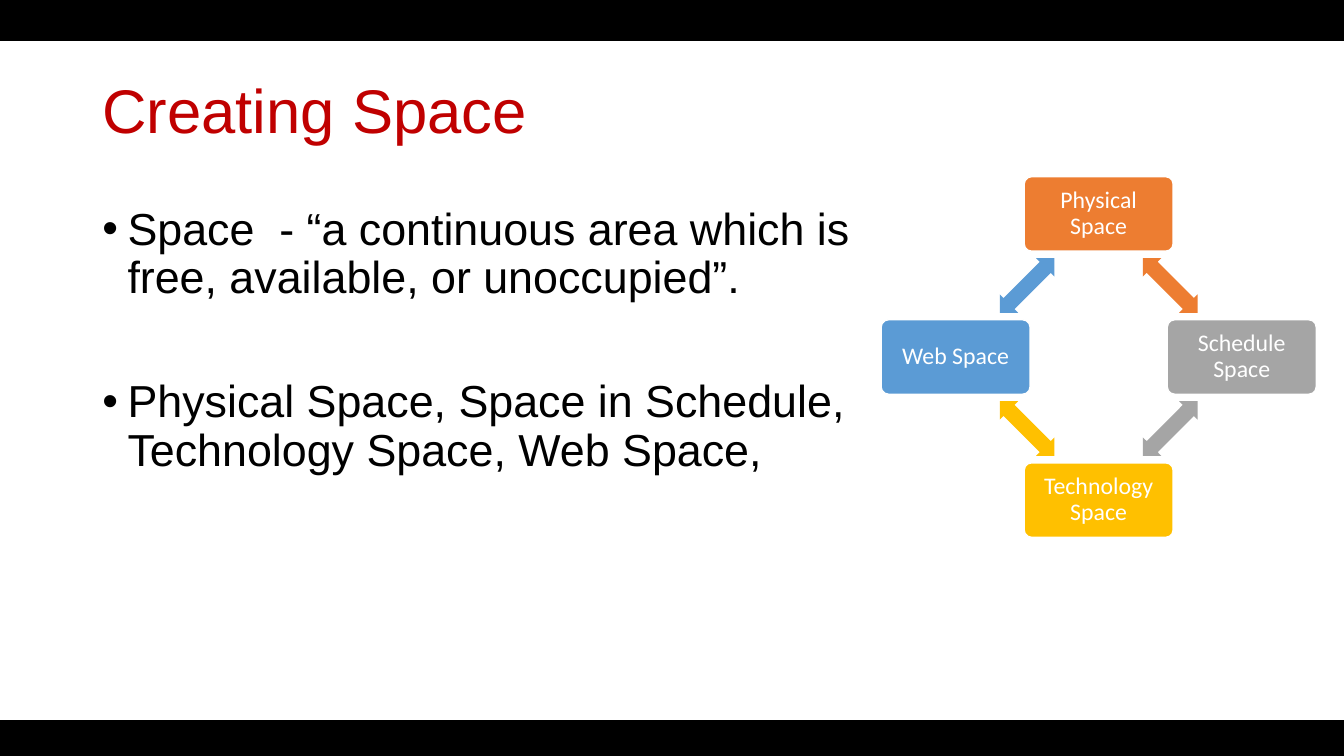
from dataclasses import dataclass
from math import cos, radians, sin

from lxml import etree
from pptx import Presentation
from pptx.dml.color import RGBColor
from pptx.enum.shapes import MSO_SHAPE
from pptx.enum.text import MSO_ANCHOR, PP_ALIGN
from pptx.oxml.ns import qn
from pptx.util import Pt

RECTANGLE = MSO_SHAPE.RECTANGLE
ROUNDED = MSO_SHAPE.ROUNDED_RECTANGLE
DOUBLE_ARROW = MSO_SHAPE.LEFT_RIGHT_ARROW
MIDDLE, TOP = MSO_ANCHOR.MIDDLE, MSO_ANCHOR.TOP
LEFT, CENTER = PP_ALIGN.LEFT, PP_ALIGN.CENTER


@dataclass(frozen=True)
class Theme:
    black: str = "000000"
    white: str = "FFFFFF"
    title_red: str = "C00000"
    orange: str = "ED7D31"
    gray: str = "A5A5A5"
    gold: str = "FFC000"
    blue: str = "5B9BD5"
    text_font: str = "Arial"
    node_font: str = "Calibri"
    title_size: int = 44
    body_size: int = 32
    node_size: int = 17


THEME = Theme()
SLIDE_WIDTH, SLIDE_HEIGHT = 960, 540
TOP_BAR_HEIGHT, BOTTOM_BAR_TOP = 28.8, 514.8
TEXT_LEFT = 66
BULLET_INDENT = 18
CYCLE_X, CYCLE_Y, CYCLE_RADIUS = 784.8, 255, 102.2
NODE_WIDTH, NODE_HEIGHT = 106.4, 53.2
ARROW_LENGTH, ARROW_HEIGHT = 55.2, 18.6

DEFINITION = "Space  - “a continuous area which is free, available, or unoccupied”."
KINDS = "Physical Space, Space in Schedule, Technology Space, Web Space,"
CYCLE = [
    ("Physical Space", THEME.orange),
    ("Schedule Space", THEME.gray),
    ("Technology Space", THEME.gold),
    ("Web Space", THEME.blue),
]


def style_paragraph(paragraph, text, font, size, color, align=LEFT):
    paragraph.text = text
    paragraph.alignment = align
    paragraph.line_spacing = 0.9
    paragraph.font.name = font
    paragraph.font.size = Pt(size)
    paragraph.font.color.rgb = RGBColor.from_string(color)


def add_block(slide, preset, left, top, width, height, fill, outline=None):
    block = slide.shapes.add_shape(preset, Pt(left), Pt(top), Pt(width), Pt(height))
    block.shadow.inherit = False
    block.fill.solid()
    block.fill.fore_color.rgb = RGBColor.from_string(fill)
    if outline:
        block.line.color.rgb = RGBColor.from_string(outline)
        block.line.width = Pt(1)
    else:
        block.line.fill.background()
    return block


def add_text_frame(slide, left, top, width, height, anchor):
    frame = slide.shapes.add_textbox(Pt(left), Pt(top), Pt(width), Pt(height)).text_frame
    frame.word_wrap = True
    frame.vertical_anchor = anchor
    return frame


def add_title(slide, text):
    frame = add_text_frame(slide, TEXT_LEFT, 28.8, 828, 104.4, MIDDLE)
    style_paragraph(frame.paragraphs[0], text, THEME.text_font, THEME.title_size, THEME.title_red)


def set_bullet(paragraph):
    properties = paragraph._p.get_or_add_pPr()
    properties.set("marL", str(Pt(BULLET_INDENT)))
    properties.set("indent", str(-Pt(BULLET_INDENT)))
    etree.SubElement(properties, qn("a:buFont")).set("typeface", THEME.text_font)
    etree.SubElement(properties, qn("a:buChar")).set("char", "•")


def add_bullets(slide, points):
    frame = add_text_frame(slide, TEXT_LEFT, 144, 589, 342.7, TOP)
    for index, (text, space_before) in enumerate(points):
        paragraph = frame.add_paragraph() if index else frame.paragraphs[0]
        style_paragraph(paragraph, text, THEME.text_font, THEME.body_size, THEME.black)
        paragraph.space_before = Pt(space_before)
        set_bullet(paragraph)


def add_node(slide, center_x, center_y, label, color):
    node = add_block(slide, ROUNDED, center_x - NODE_WIDTH / 2, center_y - NODE_HEIGHT / 2,
                     NODE_WIDTH, NODE_HEIGHT, color, THEME.white)
    node.adjustments[0] = 0.1
    frame = node.text_frame
    frame.word_wrap = True
    frame.vertical_anchor = MIDDLE
    frame.margin_left = frame.margin_right = Pt(6.5)
    frame.margin_top = frame.margin_bottom = Pt(6.5)
    style_paragraph(frame.paragraphs[0], label, THEME.node_font, THEME.node_size,
                    THEME.white, CENTER)


def add_cycle_arrow(slide, center_x, center_y, rotation, color):
    arrow = add_block(slide, DOUBLE_ARROW, center_x - ARROW_LENGTH / 2,
                      center_y - ARROW_HEIGHT / 2, ARROW_LENGTH, ARROW_HEIGHT, color)
    arrow.adjustments[0] = 0.6
    arrow.adjustments[1] = 0.5
    arrow.rotation = rotation


def add_cycle(slide, stages):
    step = 360 / len(stages)
    arrow_radius = CYCLE_RADIUS * cos(radians(step / 2))

    def on_ring(radius, angle):
        return (CYCLE_X + radius * sin(radians(angle)),
                CYCLE_Y - radius * cos(radians(angle)))

    for index, (label, color) in enumerate(stages):
        node_angle = index * step
        arrow_angle = node_angle + step / 2
        add_node(slide, *on_ring(CYCLE_RADIUS, node_angle), label, color)
        add_cycle_arrow(slide, *on_ring(arrow_radius, arrow_angle), arrow_angle, color)


def main():
    presentation = Presentation()
    presentation.slide_width = Pt(SLIDE_WIDTH)
    presentation.slide_height = Pt(SLIDE_HEIGHT)
    slide = presentation.slides.add_slide(presentation.slide_layouts[6])
    for top, height in [(0, TOP_BAR_HEIGHT), (BOTTOM_BAR_TOP, SLIDE_HEIGHT - BOTTOM_BAR_TOP)]:
        add_block(slide, RECTANGLE, 0, top, SLIDE_WIDTH, height, THEME.black, THEME.black)
    add_title(slide, "Creating Space")
    add_bullets(slide, [(DEFINITION, 10), (KINDS, 54)])
    add_cycle(slide, CYCLE)
    presentation.save("out.pptx")


if __name__ == "__main__":
    main()
